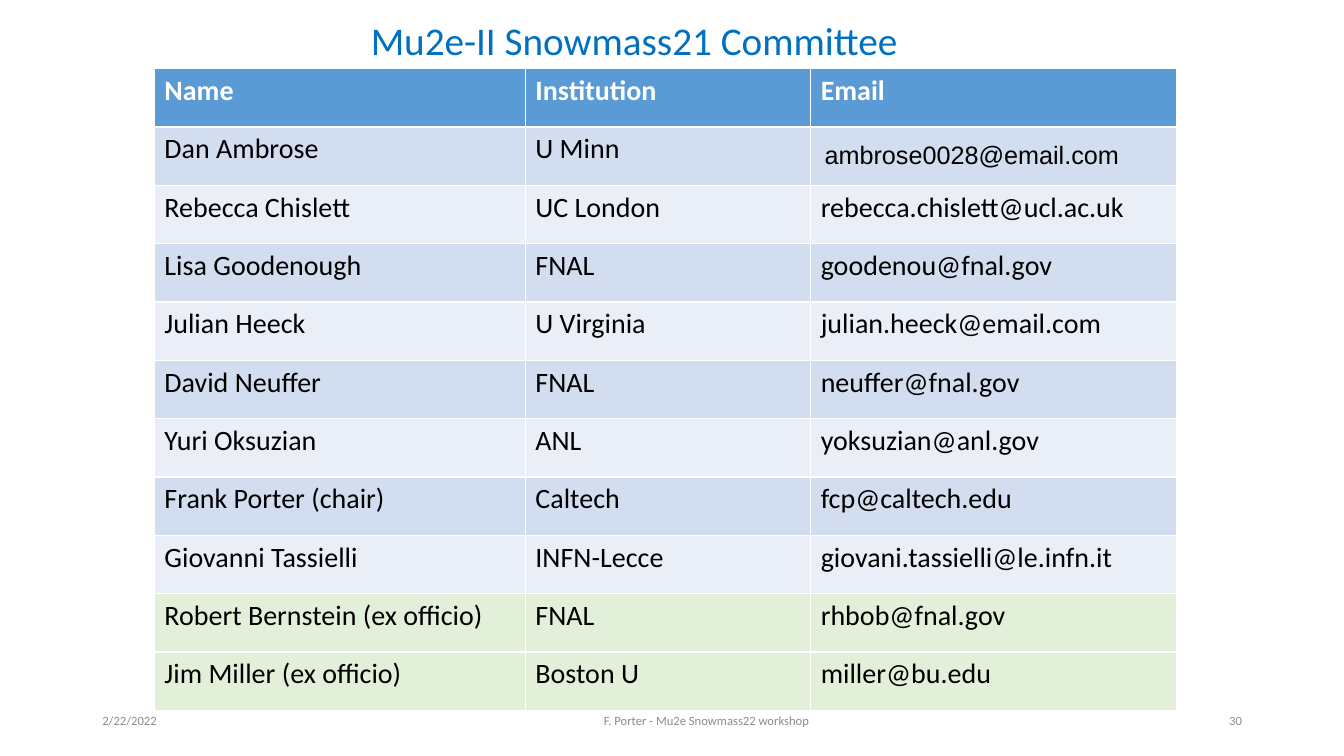
from pptx import Presentation
from pptx.dml.color import RGBColor
from pptx.enum.text import MSO_ANCHOR as ANCHOR, PP_ALIGN as ALIGN
from pptx.util import Cm, Pt

WHITE = RGBColor(0xFF, 0xFF, 0xFF)
BLACK = RGBColor(0, 0, 0)
GREY = RGBColor(0x8C, 0x8C, 0x8C)
TITLE_BLUE = RGBColor(0x00, 0x70, 0xC0)
HEADER_BLUE = RGBColor(0x5B, 0x9B, 0xD5)
BAND_DARK = RGBColor(0xD2, 0xDE, 0xEF)
BAND_LIGHT = RGBColor(0xEA, 0xEF, 0xF7)
EX_OFFICIO_GREEN = RGBColor(0xE2, 0xF0, 0xD9)

HEADINGS = ("Name", "Institution", "Email")
MEMBERS = [
    ("Dan Ambrose", "U Minn", "ambrose0028@email.com"),
    ("Rebecca Chislett", "UC London", "rebecca.chislett@ucl.ac.uk"),
    ("Lisa Goodenough", "FNAL", "goodenou@fnal.gov"),
    ("Julian Heeck", "U Virginia", "julian.heeck@email.com"),
    ("David Neuffer", "FNAL", "neuffer@fnal.gov"),
    ("Yuri Oksuzian", "ANL", "yoksuzian@anl.gov"),
    ("Frank Porter (chair)", "Caltech", "fcp@caltech.edu"),
    ("Giovanni Tassielli", "INFN-Lecce", "giovani.tassielli@le.infn.it"),
    ("Robert Bernstein (ex officio)", "FNAL", "rhbob@fnal.gov"),
    ("Jim Miller (ex officio)", "Boston U", "miller@bu.edu"),
]
COL_WIDTHS = (9.35, 7.19, 9.22)
ROW_HEIGHT = 1.47
FOOTERS = [
    ("2/22/2022", 2.33, 7.62, ALIGN.LEFT),
    ("F. Porter - Mu2e Snowmass22 workshop", 12.4, 10.8, ALIGN.CENTER),
    ("30", 23.93, 7.62, ALIGN.RIGHT),
]


def set_all(obj, values):
    for name, value in values.items():
        setattr(obj, name, value)


def write(tf, text, color, align=ALIGN.LEFT, **font):
    p = tf.paragraphs[0]
    p.alignment = align
    r = p.add_run()
    r.text = text
    set_all(r.font, {"name": "Calibri", "bold": False, **font})
    r.font.color.rgb = color


def add_title(s, text):
    sp = s.shapes.title
    set_all(sp, {"left": Cm(9.09), "top": Cm(0.28),
                 "width": Cm(19.02), "height": Cm(1.45)})
    set_all(sp.text_frame, {"vertical_anchor": ANCHOR.TOP, "word_wrap": True})
    write(sp.text_frame, text, TITLE_BLUE, size=Pt(28))


def add_footer(s, text, left, width, align):
    tf = s.shapes.add_textbox(Cm(left), Cm(17.65), Cm(width), Cm(1.02)).text_frame
    set_all(tf, {"vertical_anchor": ANCHOR.MIDDLE, "word_wrap": True})
    write(tf, text, GREY, align, size=Pt(9))


def row_fill(i, name):
    if i == 0:
        return HEADER_BLUE
    if "ex officio" in name:
        return EX_OFFICIO_GREEN
    return BAND_DARK if i % 2 else BAND_LIGHT


def add_committee(s):
    rows = [HEADINGS] + MEMBERS
    table = s.shapes.add_table(len(rows), len(HEADINGS), Cm(3.89), Cm(1.73),
                               Cm(sum(COL_WIDTHS)), Cm(ROW_HEIGHT * len(rows))).table
    for col, width in zip(table.columns, COL_WIDTHS):
        col.width = Cm(width)
    for i, row in enumerate(rows):
        table.rows[i].height = Cm(ROW_HEIGHT)
        for j, text in enumerate(row):
            cell = table.cell(i, j)
            cell.fill.solid()
            cell.fill.fore_color.rgb = row_fill(i, row[0])
            font = {"size": Pt(20), "bold": i == 0}
            if text.startswith("ambrose"):
                font.update(name="Arial", size=Pt(18))
                set_all(cell, {"vertical_anchor": ANCHOR.MIDDLE,
                               "margin_left": Cm(0.35), "margin_right": 0,
                               "margin_top": 0, "margin_bottom": 0})
            write(cell.text_frame, text, BLACK if i else WHITE, **font)


def main():
    prs = Presentation()
    set_all(prs, {"slide_width": Cm(33.87), "slide_height": Cm(19.05)})
    s = prs.slides.add_slide(prs.slide_layouts[5])
    for footer in FOOTERS:
        add_footer(s, *footer)
    add_title(s, "Mu2e-II Snowmass21 Committee")
    add_committee(s)
    prs.save("out.pptx")


if __name__ == "__main__":
    main()
